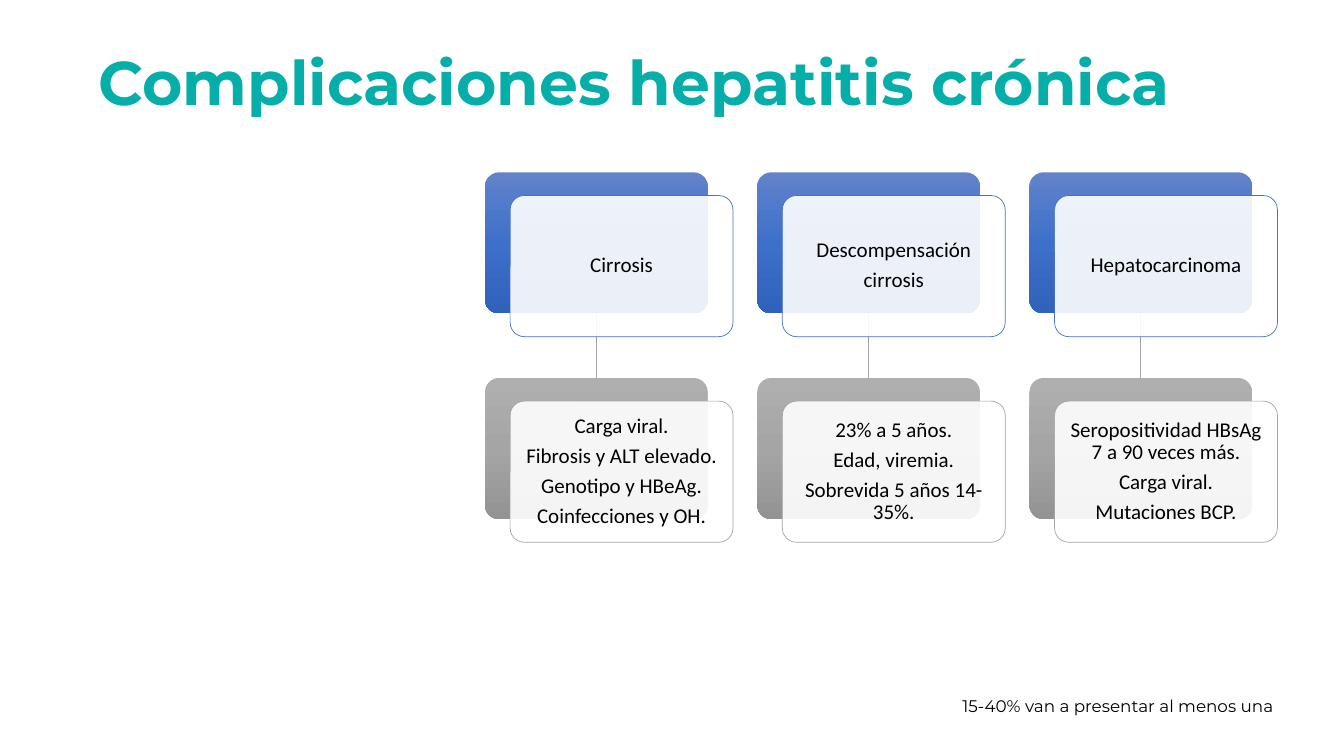
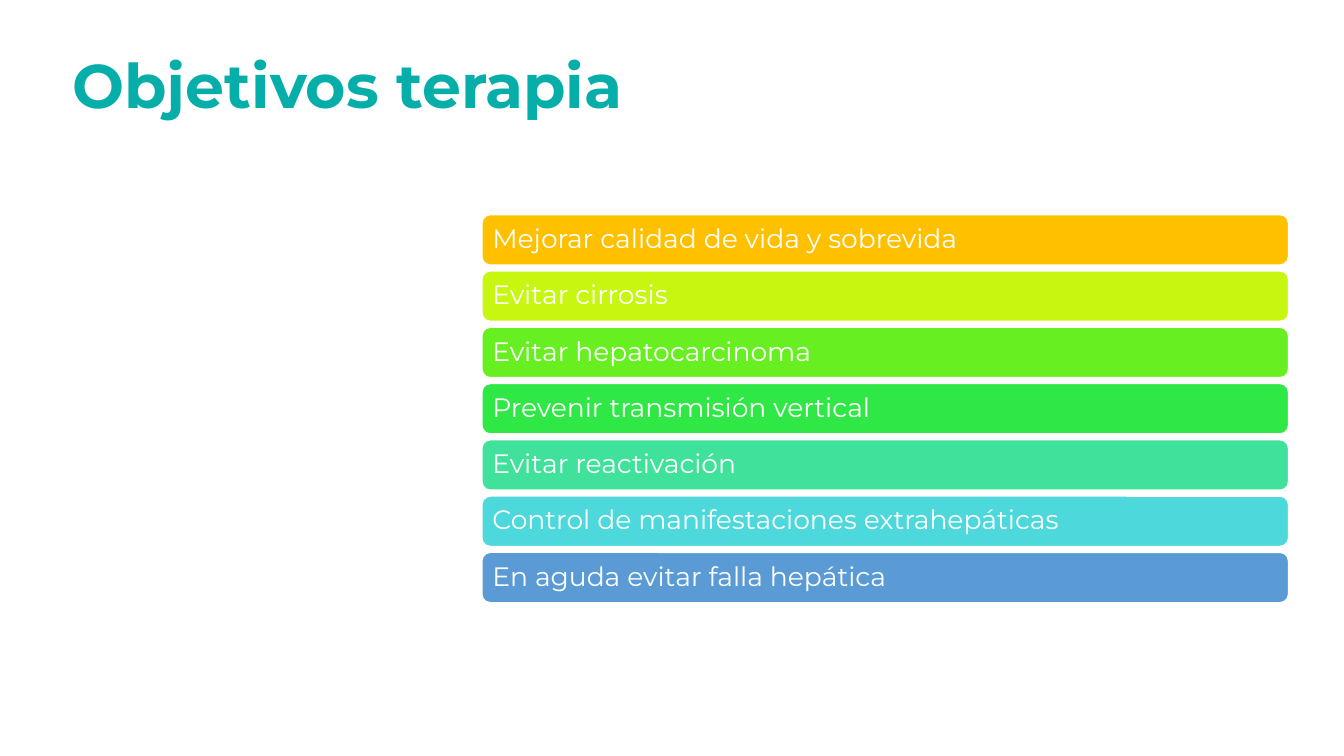
from dataclasses import dataclass
from typing import NamedTuple

from lxml.etree import SubElement
from copy import deepcopy
from pptx import Presentation
from pptx.dml.color import RGBColor
from pptx.enum.shapes import MSO_CONNECTOR as Connector, MSO_SHAPE as Preset
from pptx.enum.text import MSO_ANCHOR as Anchor, PP_ALIGN as Align
from pptx.oxml.ns import qn
from pptx.shapes.autoshape import Shape
from pptx.slide import Slide
from pptx.util import Inches, Pt

TEAL, BLACK, WHITE, BLUE, GRAY = "06AEAA", "000000", "FFFFFF", "4472C4", "A5A5A5"
HEADING_FONT, CARD_FONT = "Montserrat", "Calibri"
BOTTOM, TOP = 2, 0


class Box(NamedTuple):
    left: float
    top: float
    width: float
    height: float

    def shifted(self, right: float, down: float) -> "Box":
        return self._replace(left=self.left + right, top=self.top + down)

    def lengths(self) -> list[int]:
        return [Inches(length) for length in self]


@dataclass(frozen=True)
class Grid:
    first: Box
    column_step: float
    row_step: float

    def cell(self, column: int, row: int) -> Box:
        return self.first.shifted(column * self.column_step, row * self.row_step)


@dataclass(frozen=True)
class TextStyle:
    font: str
    size: float
    color: str
    align: Align = Align.LEFT
    bold: bool = False
    line_spacing: float = 0.9
    space_after: float = 0


@dataclass(frozen=True)
class CardStyle:
    gradient: tuple[str, str, str]
    outline: str


@dataclass(frozen=True)
class Complication:
    name: list[str]
    details: list[str]


@dataclass(frozen=True)
class Goal:
    text: str
    color: str


TITLE_TEXT = TextStyle(HEADING_FONT, 44, TEAL, bold=True)
NOTE_TEXT = TextStyle(HEADING_FONT, 12, BLACK, Align.RIGHT, line_spacing=1)
CARD_TEXT = TextStyle(CARD_FONT, 15, BLACK, Align.CENTER, space_after=5.25)
GOAL_TEXT = TextStyle(HEADING_FONT, 19, WHITE)

CARD_STYLES = [
    CardStyle(("6183CB", "3E70CA", "3062BB"), BLUE),
    CardStyle(("AFAFAF", "A5A5A5", "939393"), GRAY),
]
CARD_GRID = Grid(Box(4.81, 1.71, 2.21, 1.4), column_step=2.7, row_step=2.04)
FRONT_SHIFT = (0.25, 0.23)

COMPLICATIONS = [
    Complication(
        ["Cirrosis"],
        ["Carga viral.", "Fibrosis y ALT elevado.", "Genotipo y HBeAg.", "Coinfecciones y OH."],
    ),
    Complication(
        ["Descompensación", "cirrosis"],
        ["23% a 5 años.", "Edad, viremia.", "Sobrevida 5 años 14-35%."],
    ),
    Complication(
        ["Hepatocarcinoma"],
        ["Seropositividad HBsAg 7 a 90 veces más.", "Carga viral.", "Mutaciones BCP."],
    ),
]

GOALS = [
    Goal("Mejorar calidad de vida y sobrevida", "FFC000"),
    Goal("Evitar cirrosis", "C7F711"),
    Goal("Evitar hepatocarcinoma", "67EF21"),
    Goal("Prevenir transmisión vertical", "30E845"),
    Goal("Evitar reactivación", "3FE19B"),
    Goal("Control de manifestaciones extrahepáticas", "4DD8DB"),
    Goal("En aguda evitar falla hepática", "5B9BD5"),
]
GOALS_AREA = Box(4.78, 2.13, 8, 3.85)
GOAL_HEIGHT = 0.5


def rgb(color: str) -> RGBColor:
    return RGBColor.from_string(color)


def write(shape: Shape, lines: list[str], style: TextStyle, anchor: Anchor = Anchor.MIDDLE) -> None:
    frame = shape.text_frame
    frame.word_wrap = True
    frame.vertical_anchor = anchor
    frame.text = "\n".join(lines)
    for paragraph in frame.paragraphs:
        paragraph.alignment = style.align
        paragraph.line_spacing = style.line_spacing
        paragraph.space_after = Pt(style.space_after)
        paragraph.font.name = style.font
        paragraph.font.size = Pt(style.size)
        paragraph.font.bold = style.bold
        paragraph.font.color.rgb = rgb(style.color)


def set_insets(shape: Shape, inset: float) -> None:
    frame = shape.text_frame
    frame.margin_left = frame.margin_right = Inches(inset)
    frame.margin_top = frame.margin_bottom = Inches(inset)


def add_text(slide: Slide, box: Box, text: str, style: TextStyle, anchor: Anchor) -> None:
    write(slide.shapes.add_textbox(*box.lengths()), [text], style, anchor)


def add_title(slide: Slide, box: Box, text: str) -> None:
    add_text(slide, box, text, TITLE_TEXT, Anchor.MIDDLE)


def add_rounded(slide: Slide, box: Box) -> Shape:
    shape = slide.shapes.add_shape(Preset.ROUNDED_RECTANGLE, *box.lengths())
    shape.shadow.inherit = False
    return shape


def outline(shape: Shape, color: str, width: float) -> None:
    shape.line.color.rgb = rgb(color)
    shape.line.width = Pt(width)


def add_back_card(slide: Slide, box: Box, style: CardStyle) -> Shape:
    card = add_rounded(slide, box)
    card.adjustments[0] = 0.1
    card.line.fill.background()
    card.fill.gradient()
    card.fill.gradient_angle = 270
    stop_list = card.element.spPr.find(".//" + qn("a:gsLst"))
    stop_list.append(deepcopy(stop_list[0]))
    for index, (stop, color) in enumerate(zip(card.fill.gradient_stops, style.gradient)):
        stop.position = index / 2
        stop.color.rgb = rgb(color)
    return card


def add_front_card(slide: Slide, box: Box, style: CardStyle, lines: list[str]) -> None:
    card = add_rounded(slide, box)
    card.adjustments[0] = 0.1
    card.fill.solid()
    card.fill.fore_color.rgb = rgb(WHITE)
    fill_color = card.element.spPr.find(qn("a:solidFill"))[0]
    SubElement(fill_color, qn("a:alpha"), val="90000")
    outline(card, style.outline, 0.5)
    set_insets(card, 0.06)
    write(card, lines, CARD_TEXT)


def join_cards(slide: Slide, upper: Shape, lower: Shape) -> None:
    connector = slide.shapes.add_connector(Connector.STRAIGHT, 0, 0, 0, 0)
    connector.begin_connect(upper, BOTTOM)
    connector.end_connect(lower, TOP)
    connector.line.color.rgb = rgb(GRAY)
    connector.line.width = Pt(0.5)
    SubElement(connector.element.spPr, qn("a:effectLst"))


def add_complication(slide: Slide, column: int, complication: Complication) -> None:
    boxes = [CARD_GRID.cell(column, row) for row in range(len(CARD_STYLES))]
    upper, lower = [add_back_card(slide, box, style) for box, style in zip(boxes, CARD_STYLES)]
    join_cards(slide, upper, lower)
    texts = (complication.name, complication.details)
    for box, style, lines in zip(boxes, CARD_STYLES, texts):
        add_front_card(slide, box.shifted(*FRONT_SHIFT), style, lines)


def add_goal(slide: Slide, box: Box, goal: Goal) -> None:
    bar = add_rounded(slide, box)
    bar.fill.solid()
    bar.fill.fore_color.rgb = rgb(goal.color)
    outline(bar, WHITE, 1)
    set_insets(bar, 0.08)
    write(bar, [goal.text], GOAL_TEXT)


def build_complications(slide: Slide) -> None:
    add_title(slide, Box(0.88, 0.32, 11.56, 1.06), "Complicaciones hepatitis crónica")
    for column, complication in enumerate(COMPLICATIONS):
        add_complication(slide, column, complication)
    note = "15-40% van a presentar al menos una"
    add_text(slide, Box(3.38, 6.85, 9.35, 0.3), note, NOTE_TEXT, Anchor.TOP)


def build_goals(slide: Slide) -> None:
    add_title(slide, Box(0.62, 0.15, 11.5, 1.45), "Objetivos terapia")
    step = (GOALS_AREA.height - GOAL_HEIGHT) / (len(GOALS) - 1)
    grid = Grid(GOALS_AREA._replace(height=GOAL_HEIGHT), column_step=0, row_step=step)
    for row, goal in enumerate(GOALS):
        add_goal(slide, grid.cell(0, row), goal)


def main() -> None:
    presentation = Presentation()
    presentation.slide_width = Inches(13.33)
    presentation.slide_height = Inches(7.5)
    blank_layout = presentation.slide_layouts[6]
    for build in (build_complications, build_goals):
        build(presentation.slides.add_slide(blank_layout))
    presentation.save("out.pptx")


if __name__ == "__main__":
    main()
